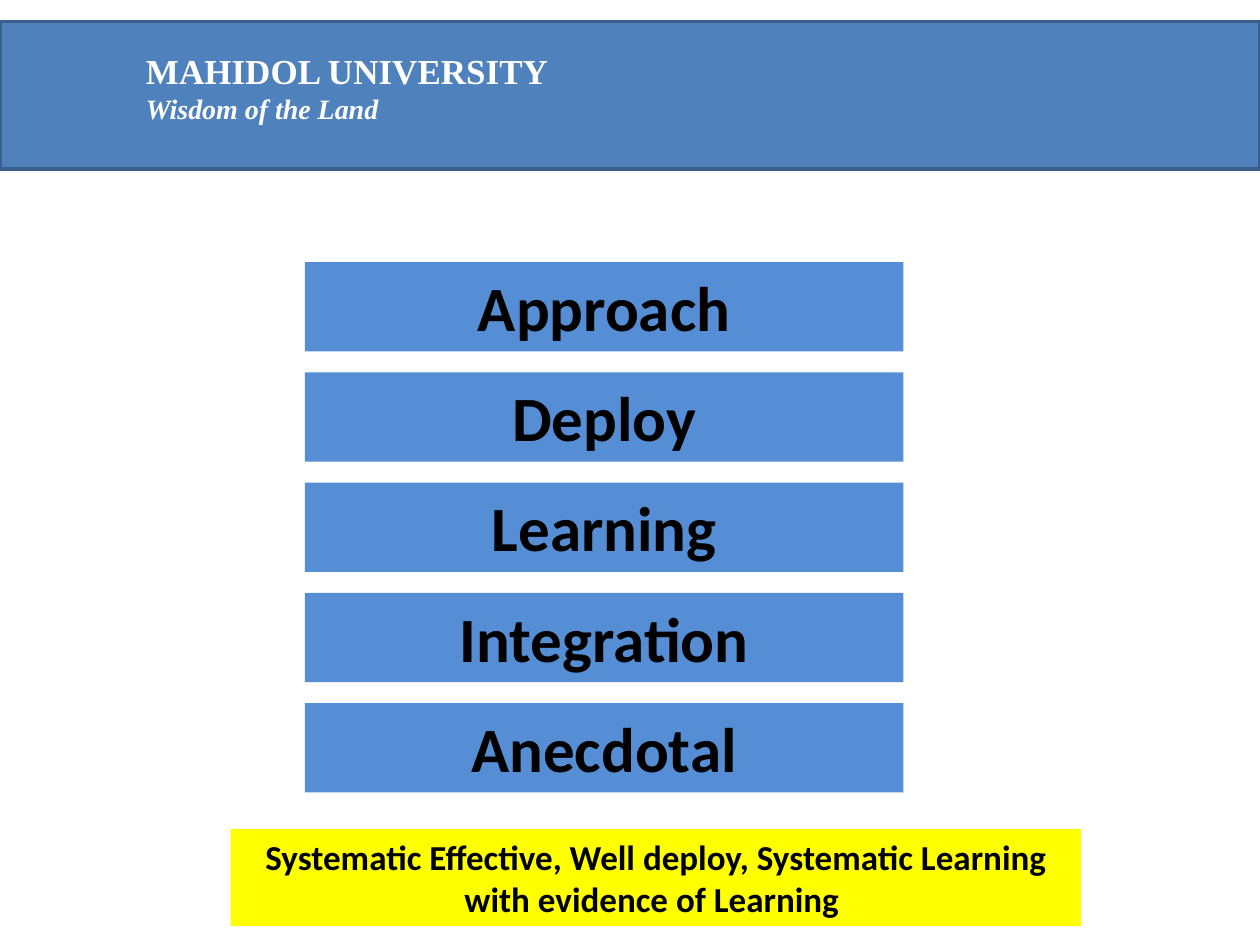
from dataclasses import dataclass

from pptx import Presentation
from pptx.enum import shapes, text
from pptx.util import Inches, Pt
from pptx.dml.color import RGBColor

COLORS = {
    "header": "4F81BD",
    "header_line": "3A5F8C",
    "step": "558ED5",
    "summary": "FFFF00",
    "dark": "000000",
    "light": "FFFFFF",
}


@dataclass
class Bar:
    left: float
    top: float
    width: float
    height: float
    fill: str
    label: str = ""
    size: int = 36


STEPS = ["Approach", "Deploy", "Learning", "Integration", "Anecdotal"]
STEP_TOP, STEP_PITCH = 2.08, 0.875


def color(name: str) -> RGBColor:
    return RGBColor.from_string(COLORS[name])


def write(paragraph, words: str, *, size: int, font: str = "Calibri",
          fill: str = "dark", italic: bool = False, align=None) -> None:
    paragraph.alignment = align
    span = paragraph.add_run()
    span.text = words
    span.font.name = font
    span.font.size = Pt(size)
    span.font.bold = True
    span.font.italic = italic
    span.font.color.rgb = color(fill)


def draw_bar(page, bar: Bar):
    box = page.shapes.add_shape(
        shapes.MSO_SHAPE.RECTANGLE, Inches(bar.left), Inches(bar.top),
        Inches(bar.width), Inches(bar.height))
    box.shadow.inherit = False
    box.fill.solid()
    box.fill.fore_color.rgb = color(bar.fill)
    box.line.fill.background()
    if bar.label:
        frame = box.text_frame
        frame.word_wrap = True
        frame.vertical_anchor = text.MSO_ANCHOR.TOP
        frame.auto_size = text.MSO_AUTO_SIZE.SHAPE_TO_FIT_TEXT
        write(frame.paragraphs[0], bar.label, size=bar.size,
              align=text.PP_ALIGN.CENTER)
    return box


def draw_header(page) -> None:
    band = draw_bar(page, Bar(0, 0.17, 10, 1.17, "header"))
    band.line.color.rgb = color("header_line")
    band.line.width = Pt(2)

    box = page.shapes.add_textbox(
        Inches(1.06), Inches(0.34), Inches(3.41), Inches(0.7))
    frame = box.text_frame
    frame.word_wrap = False
    frame.auto_size = text.MSO_AUTO_SIZE.SHAPE_TO_FIT_TEXT
    style = {"font": "Times New Roman", "fill": "light"}
    write(frame.paragraphs[0], "MAHIDOL UNIVERSITY", size=20, **style)
    write(frame.add_paragraph(), "Wisdom of the Land", size=16, italic=True,
          **style)


def main() -> None:
    deck = Presentation()
    deck.slide_width, deck.slide_height = Inches(10), Inches(7.5)
    page = deck.slides.add_slide(deck.slide_layouts.get_by_name("Blank"))

    draw_header(page)
    for index, step in enumerate(STEPS):
        top = STEP_TOP + index * STEP_PITCH
        draw_bar(page, Bar(2.42, top, 4.75, 0.71, "step", step))
    draw_bar(page, Bar(
        1.83, 6.58, 6.75, 0.77, "summary",
        "Systematic Effective, Well deploy, Systematic Learning "
        "with evidence of Learning ", size=20))

    deck.save("out.pptx")


if __name__ == "__main__":
    main()
